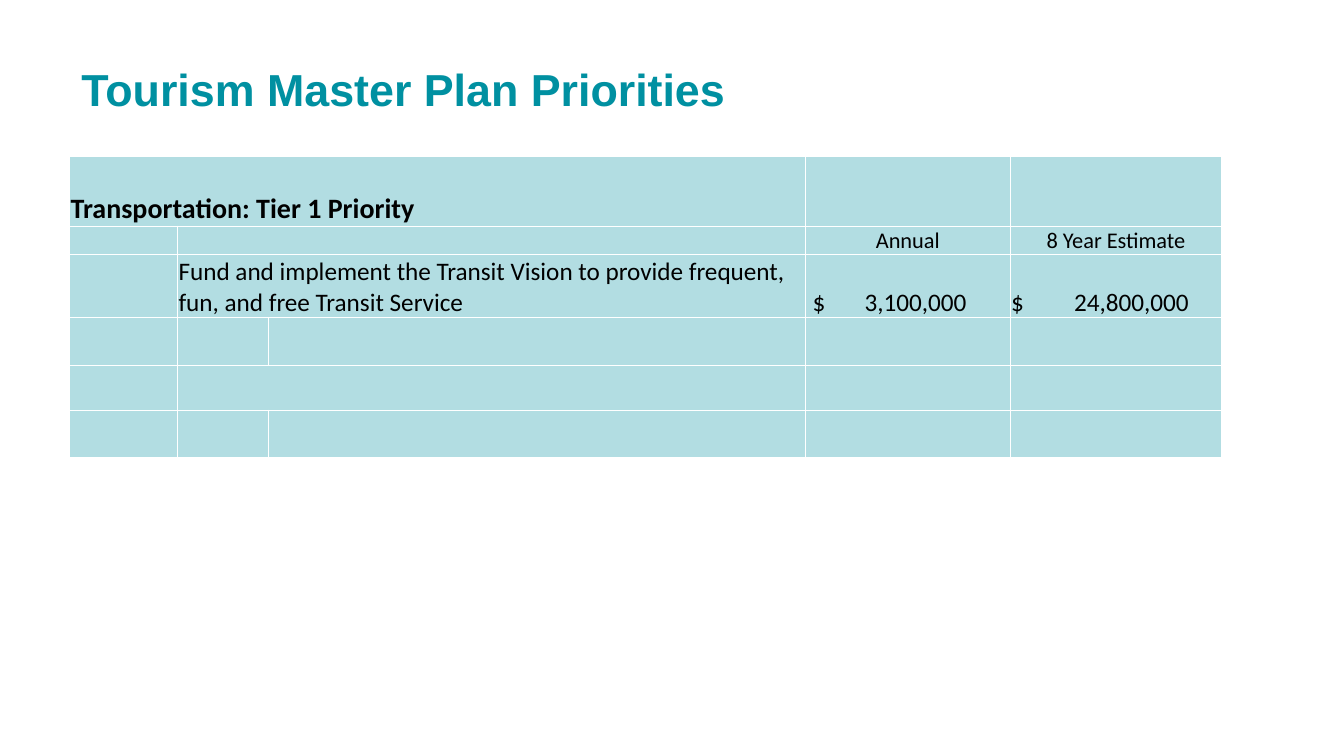
from lxml import etree
from pptx import Presentation
from pptx import util as u
from pptx.dml.color import RGBColor
from pptx.enum import text
from pptx.oxml import parse_xml
from pptx.oxml.ns import nsdecls, qn
from pptx.util import Cm

COLORS = {"teal": "0090A1", "ink": "000000", "border": "FFFFFF"}
COLUMN_WIDTHS = [2.72, 2.28, 13.54, 5.16, 5.33]
ROW_HEIGHTS = [1.75, 0.71, 1.6, 1.19, 1.14, 1.19]
MERGES = [(0, 0, 2), (1, 1, 2), (2, 1, 2), (4, 1, 2)]  # row, first column, last column


def add_span(para, wording, size, font, color, bold=False):
    span = para.add_run()
    span.text = wording
    span.font.size = u.Pt(size)
    span.font.name = font
    span.font.bold = bold
    span.font.color.rgb = RGBColor.from_string(COLORS[color])


def add_title(page, wording):
    box = page.shapes.add_textbox(Cm(1.8), Cm(1.63), Cm(29.21), Cm(1.37))
    frame = box.text_frame
    frame.word_wrap = True
    frame.vertical_anchor = text.MSO_ANCHOR.MIDDLE
    para = frame.paragraphs[0]
    para.line_spacing = 0.9
    add_span(para, wording, 32, "Arial", "teal", bold=True)


def style_cell(cell):
    """Give a cell its translucent fill, white borders and tight margins."""
    cell.fill.solid()
    cell.fill.fore_color.rgb = RGBColor.from_string(COLORS["teal"])
    properties = cell._tc.get_or_add_tcPr()
    tint = properties.find(".//" + qn("a:srgbClr"))
    etree.SubElement(tint, qn("a:alpha"), val="30000")
    for place, side in enumerate("LRTB"):
        properties.insert(place, parse_xml(
            f'<a:ln{side} {nsdecls("a")} w="12700"><a:solidFill>'
            f'<a:srgbClr val="{COLORS["border"]}"/></a:solidFill></a:ln{side}>'))
    cell.margin_left = cell.margin_right = cell.margin_top = Cm(0.02)
    cell.margin_bottom = 0
    cell.vertical_anchor = text.MSO_ANCHOR.BOTTOM
    cell.text_frame.paragraphs[0]._p.get_or_add_endParaRPr().set("sz", "1600")


def add_table(page):
    rows, columns = len(ROW_HEIGHTS), len(COLUMN_WIDTHS)
    table = page.shapes.add_table(rows, columns, Cm(1.76), Cm(3.95),
                                  Cm(sum(COLUMN_WIDTHS)), Cm(sum(ROW_HEIGHTS))).table
    table.first_row = table.horz_banding = False
    for column, width in zip(table.columns, COLUMN_WIDTHS):
        column.width = Cm(width)
    for row, height in zip(table.rows, ROW_HEIGHTS):
        row.height = Cm(height)
    for row, first, last in MERGES:
        table.cell(row, first).merge(table.cell(row, last))
    for cell in table.iter_cells():
        if not cell.is_spanned:
            style_cell(cell)
    return table


def fill_cell(cell, wording, size, bold=False, align=text.PP_ALIGN.LEFT):
    para = cell.text_frame.paragraphs[0]
    para.alignment = align
    add_span(para, wording, size, "Calibri", "ink", bold)


def fill_amount(cell, amount, indent, right_edge):
    """Put the dollar sign at the left and end the amount at a right tab."""
    cell.margin_left = Cm(indent)
    properties = cell.text_frame.paragraphs[0]._p.get_or_add_pPr()
    stops = etree.SubElement(properties, qn("a:tabLst"))
    etree.SubElement(stops, qn("a:tab"), pos=str(Cm(right_edge)), algn="r")
    fill_cell(cell, "$\t" + amount, 18)


def main():
    deck = Presentation()
    deck.slide_width, deck.slide_height = Cm(33.87), Cm(19.05)
    page = deck.slides.add_slide(deck.slide_layouts[6])
    add_title(page, "Tourism Master Plan Priorities")
    table = add_table(page)
    fill_cell(table.cell(0, 0), "Transportation: Tier 1 Priority", 20, bold=True)
    for column, heading in enumerate(["Annual", "8 Year Estimate"], start=3):
        fill_cell(table.cell(1, column), heading, 16, align=text.PP_ALIGN.CENTER)
    fill_cell(table.cell(2, 1), "Fund and implement the Transit Vision to provide "
              "frequent, fun, and free Transit Service", 18)
    fill_amount(table.cell(2, 3), "3,100,000", 0.18, 3.88)
    fill_amount(table.cell(2, 4), "24,800,000", 0.02, 4.48)
    deck.save("out.pptx")


if __name__ == "__main__":
    main()
